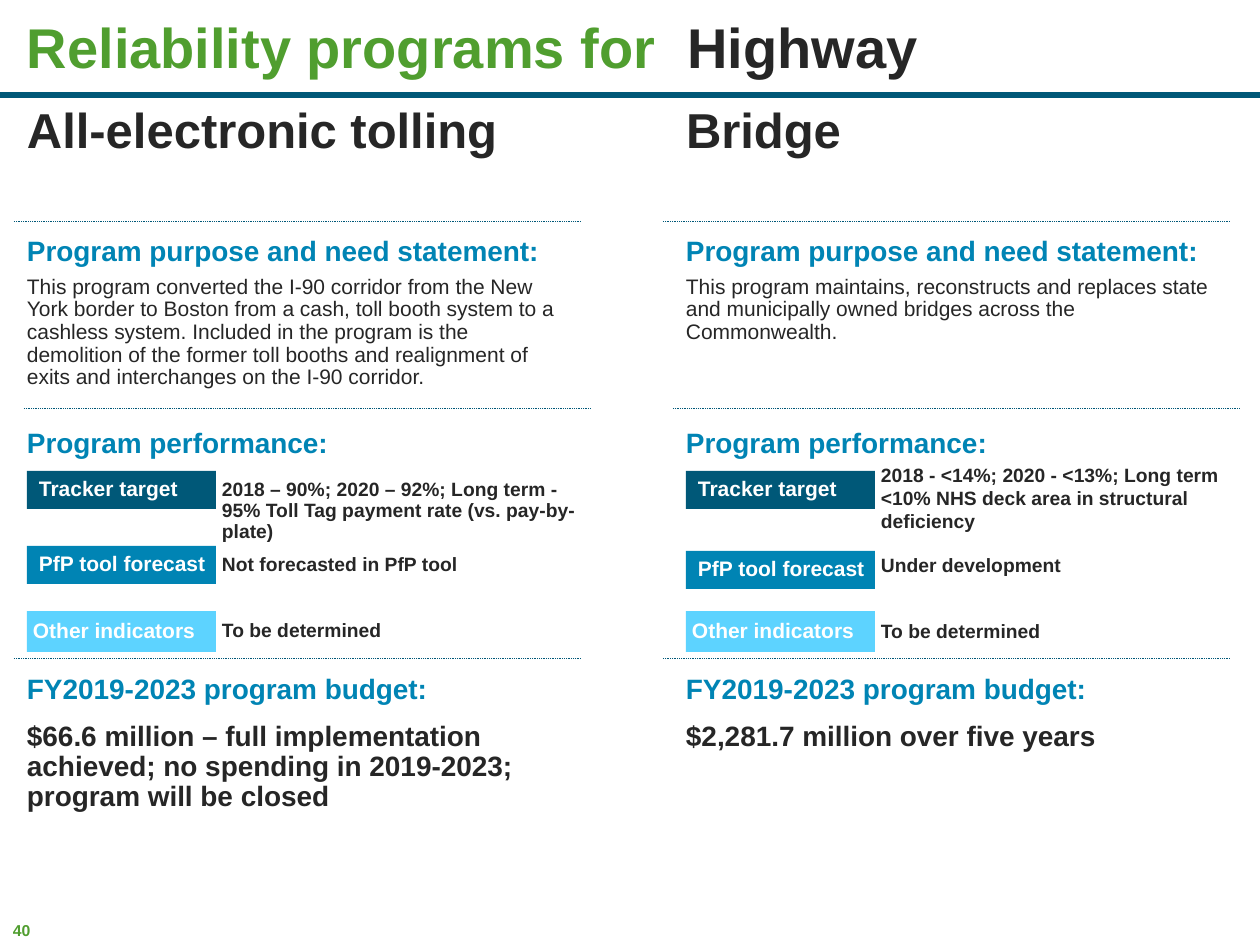
import dataclasses

import pptx
import pptx.dml.color
import pptx.enum.dml
import pptx.enum.shapes
import pptx.enum.text
import pptx.oxml
import pptx.oxml.ns
import pptx.util

ANCHOR = pptx.enum.text.MSO_ANCHOR
RECT = pptx.enum.shapes.MSO_SHAPE.RECTANGLE


@dataclasses.dataclass(frozen=True)
class Theme:
    font: str = "Arial"
    green: str = "509E2F"
    ink: str = "262626"
    navy: str = "005878"
    blue: str = "0084B4"
    sky: str = "5DD3FF"
    white: str = "FFFFFF"
    title: int = 32
    heading: int = 28
    section: int = 16
    body: int = 12
    value: int = 11
    number: int = 9


THEME = Theme()
PLAIN_INSETS = (13, 6, 13, 6)
BUDGET_INSETS = (0, 6, 0, 6)
VALUE_INSETS = (9, 9, 11, 13)
LABELS = [("Tracker target", THEME.navy, 12), ("PfP tool forecast", THEME.blue, 12),
          ("Other indicators", THEME.sky, 6)]


@dataclasses.dataclass(frozen=True)
class Indicator:
    """Positions are px from the top of the slide."""
    label_top: int
    label_height: int
    text: str
    top: int
    height: int
    anchor: ANCHOR = ANCHOR.MIDDLE
    insets: tuple = VALUE_INSETS
    spacing: float = 0.9


@dataclasses.dataclass(frozen=True)
class Program:
    name: str
    purpose: str
    indicators: tuple
    budget: str
    rule_shift: int


PROGRAMS = [
    Program(
        "All-electronic tolling",
        "This program converted the I-90 corridor from the New York border to Boston from a "
        "cash, toll booth system to a cashless system. Included in the program is the "
        "demolition of the former toll booths and realignment of exits and interchanges on "
        "the I-90 corridor.",
        (Indicator(471, 38, "2018 – 90%; 2020 – 92%; Long term - 95% Toll Tag payment rate "
                   "(vs. pay-by-plate)", 471, 76, ANCHOR.TOP),
         Indicator(546, 38, "Not forecasted in PfP tool", 546, 43),
         Indicator(611, 41, "To be determined", 612, 43)),
        "$66.6 million – full implementation achieved; no spending in 2019-2023; "
        "program will be closed", 0),
    Program(
        "Bridge",
        "This program maintains, reconstructs and replaces state and municipally owned "
        "bridges across the Commonwealth.",
        (Indicator(471, 38, "2018 - <14%; 2020 - <13%; Long term <10% NHS deck area in "
                   "structural deficiency", 471, 67, insets=(9, 0, 11, 13), spacing=1.0),
         Indicator(551, 38, "Under development", 545, 43, spacing=1.0),
         Indicator(611, 41, "To be determined", 613, 43)),
        "$2,281.7 million over five years", -10),
]


def px(n):
    return pptx.util.Emu(round(n * 914400 / 126))


def rgb(value):
    return pptx.dml.color.RGBColor.from_string(value)


def place(sp, x, y, w, h):
    sp.left, sp.top, sp.width, sp.height = px(x), px(y), px(w), px(h)


def add_run(p, text, size, color, bold=True):
    r = p.add_run()
    r.text = text
    r.font.name, r.font.size, r.font.bold = THEME.font, pptx.util.Pt(size), bold
    r.font.color.rgb = rgb(color)
    return r


def format_frame(sp, insets=PLAIN_INSETS, anchor=ANCHOR.TOP, wrap=True, spacing=0.9):
    """Set up the frame of sp and return its first paragraph."""
    tf = sp.text_frame
    tf.auto_size = pptx.enum.text.MSO_AUTO_SIZE.NONE
    tf.word_wrap, tf.vertical_anchor = wrap, anchor
    tf.margin_left, tf.margin_top, tf.margin_right, tf.margin_bottom = map(px, insets)
    p = tf.paragraphs[0]
    p.alignment = pptx.enum.text.PP_ALIGN.LEFT
    p.line_spacing, p.space_before = spacing, pptx.util.Pt(0)
    return p


def add_text(slide, box, text, size, color, bold=True, **frame):
    sp = slide.shapes.add_textbox(*map(px, box))
    add_run(format_frame(sp, **frame), text, size, color, bold)


def add_bar(slide, box, color):
    sp = slide.shapes.add_shape(RECT, *map(px, box))
    sp.shadow.inherit = False
    sp.fill.solid()
    sp.fill.fore_color.rgb = rgb(color)
    sp.line.fill.background()
    return sp


def add_dotted_rule(slide, x, y, w):
    line = slide.shapes.add_connector(pptx.enum.shapes.MSO_CONNECTOR.STRAIGHT,
                                      px(x), px(y), px(x + w), px(y))
    line.line.color.rgb = rgb(THEME.navy)
    line.line.width = pptx.util.Pt(0.5)
    line.line.dash_style = pptx.enum.dml.MSO_LINE.ROUND_DOT
    line._element.spPr.append(pptx.oxml.parse_xml(
        "<a:effectLst %s/>" % pptx.oxml.ns.nsdecls("a")))


def build_header(slide):
    add_bar(slide, (0, 92, 1260, 6), THEME.navy)
    title = slide.shapes.title
    place(title, 14, 10, 1236, 80)
    p = format_frame(title, anchor=ANCHOR.MIDDLE)
    add_run(p, "Reliability programs for", THEME.title, THEME.green)
    gap = add_run(p, " ", THEME.title, THEME.green)
    gap.font._element.set("spc", "890")  # widens the gap before the mode
    add_run(p, "Highway", THEME.title, THEME.ink)


def build_indicator(slide, x, label, item):
    name, color, inset = label
    bar = add_bar(slide, (x, item.label_top, 189, item.label_height), color)
    p = format_frame(bar, (inset, 6, 0, 6), ANCHOR.MIDDLE, wrap=False)
    add_run(p, name, THEME.body, THEME.white)
    add_text(slide, (x + 186, item.top, 378, item.height), item.text, THEME.value, THEME.ink,
             insets=item.insets, anchor=item.anchor, spacing=item.spacing)


def build_program(slide, heading, x, w, program):
    """Fill one column, x px from the left and w px wide."""
    place(heading, x, 100, w, 121)
    add_run(format_frame(heading), program.name, THEME.heading, THEME.ink)
    for y, shift in ((221, 0), (408, 10), (658, 0)):
        add_dotted_rule(slide, x + program.rule_shift + shift, y, w)

    for y, text in ((231, "Program purpose and need statement:"),
                    (423, "Program performance:")):
        add_text(slide, (x, y, w, 32), text, THEME.section, THEME.blue)
    add_text(slide, (x, 270, w, 140), program.purpose, THEME.body, THEME.ink, bold=False)

    inner = x + 13
    for label, item in zip(LABELS, program.indicators):
        build_indicator(slide, inner, label, item)
    for y, text, color in ((669, "FY2019-2023 program budget:", THEME.blue),
                           (716, program.budget, THEME.ink)):
        add_text(slide, (inner, y, w, 47), text, THEME.section, color, insets=BUDGET_INSETS)


def main():
    prs = pptx.Presentation()
    prs.slide_width, prs.slide_height = px(1260), px(945)
    slide = prs.slides.add_slide(prs.slide_layouts.get_by_name("Comparison"))
    holders = {sp.placeholder_format.idx: sp for sp in slide.placeholders}
    for idx in (2, 4):
        holders[idx]._element.getparent().remove(holders[idx]._element)

    build_header(slide)
    for idx, x, program in zip((1, 3), (14, 673), PROGRAMS):
        build_program(slide, holders[idx], x, 567, program)
    add_text(slide, (0, 915, 45, 32), "40", THEME.number, THEME.green, wrap=False, spacing=1.0)
    prs.save("out.pptx")


if __name__ == "__main__":
    main()
